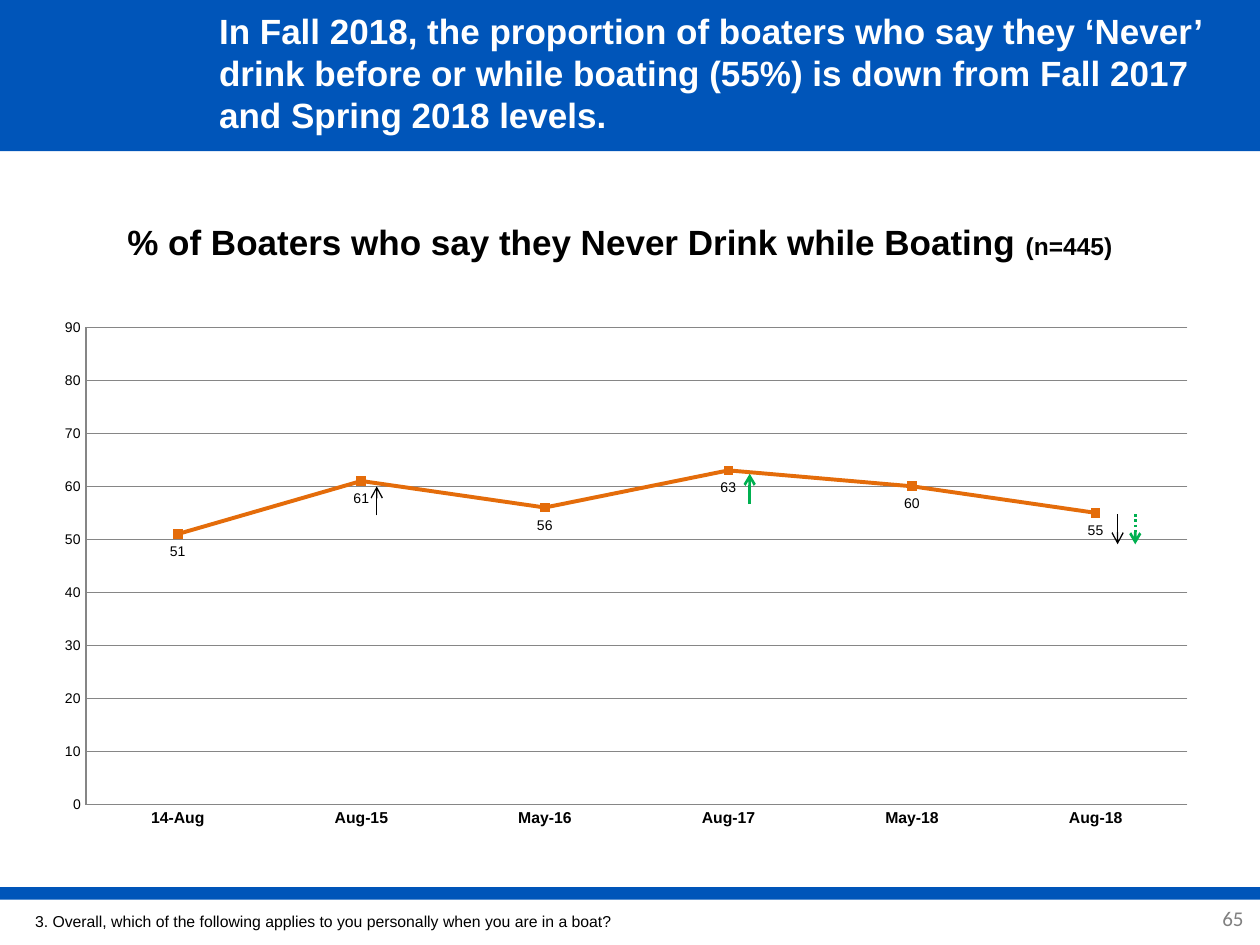
from lxml import etree
from pptx import Presentation
from pptx.chart.data import CategoryChartData
from pptx.dml.color import RGBColor
from pptx.enum.chart import XL_CHART_TYPE, XL_LABEL_POSITION, XL_MARKER_STYLE, XL_TICK_MARK
from pptx.enum.dml import MSO_LINE
from pptx.enum.shapes import MSO_CONNECTOR, MSO_SHAPE
from pptx.enum.text import MSO_ANCHOR, PP_ALIGN
from pptx.oxml import parse_xml
from pptx.oxml.ns import nsdecls, qn
from pptx.util import Inches, Pt

LINE = XL_CHART_TYPE.LINE_MARKERS
BELOW = XL_LABEL_POSITION.BELOW
SQUARE = XL_MARKER_STYLE.SQUARE
NO_TICK = XL_TICK_MARK.NONE
SOLID, DOTS = MSO_LINE.SOLID, MSO_LINE.ROUND_DOT
STRAIGHT, RECT = MSO_CONNECTOR.STRAIGHT, MSO_SHAPE.RECTANGLE
TOP, MID = MSO_ANCHOR.TOP, MSO_ANCHOR.MIDDLE
LEFT, MIDST, RIGHT = PP_ALIGN.LEFT, PP_ALIGN.CENTER, PP_ALIGN.RIGHT

HEX = {"blue": "0055B9", "white": "FFFFFF", "black": "000000", "gray": "808080",
       "grid": "868686", "orange": "E46C0A", "green": "00B050"}
RGB = {name: RGBColor.from_string(code) for name, code in HEX.items()}

deck = Presentation()
deck.slide_width, deck.slide_height = Inches(10), Inches(7.5)
slide = deck.slides.add_slide(deck.slide_layouts[6])
shapes = slide.shapes

# Grid of 100 columns by 75 rows
COL, ROW = deck.slide_width / 100, deck.slide_height / 75


def cells(x, y, w, h):
    return int(x * COL), int(y * ROW), int(w * COL), int(h * ROW)


def add_text(area, runs, size, color, bold=False, align=LEFT, anchor=MID, face="Arial"):
    frame = shapes.add_textbox(*cells(*area)).text_frame
    frame.word_wrap = True
    frame.vertical_anchor = anchor
    para = frame.paragraphs[0]
    para.alignment = align
    font = para.font
    font.name, font.size, font.bold = face, Pt(size), bold
    font.color.rgb = RGB[color]
    for text, small in runs:
        run = para.add_run()
        run.text = text
        if small:
            run.font.size = Pt(small)
    return frame


# Header band and footer rule
for area in ((0, -0.3, 100, 12.3), (0, 70.4, 100, 1)):
    band = shapes.add_shape(RECT, *cells(*area))
    band.shadow.inherit = False
    band.fill.solid()
    band.fill.fore_color.rgb = RGB["blue"]
    band.line.fill.background()

# Title and page number
add_text((16.4, 0, 80.9, 11.5),
         [("In Fall 2018, the proportion of boaters who say they ‘Never’ drink before "
           "or while boating (55%) is down from Fall 2017 and Spring 2018 levels.", None)],
         20, "white", bold=True)
page = add_text((93.6, 70.9, 6.3, 4), [("65", None)], 12, "gray",
                align=RIGHT, face="Calibri")
page.margin_left = page.margin_top = page.margin_bottom = Inches(0.04)
page.margin_right = Inches(0.12)

# Line chart
data = CategoryChartData()
data.categories = ["14-Aug", "Aug-15", "May-16", "Aug-17", "May-18", "Aug-18"]
data.add_series("Series 1", [51, 61, 56, 63, 60, 55])
chart = shapes.add_chart(LINE, *cells(3.3, 24.5, 92.8, 42.1), data).chart
chart.has_legend = chart.has_title = False
chart.font.name, chart.font.size = "Arial", Pt(8)
chart.font.color.rgb = RGB["black"]

months, scale = chart.category_axis, chart.value_axis
scale.minimum_scale, scale.maximum_scale, scale.major_unit = 0, 90, 10
scale.has_major_gridlines = True
for axis in (months, scale):
    axis.major_tick_mark = axis.minor_tick_mark = NO_TICK
for rule in (months.format.line, scale.format.line, scale.major_gridlines.format.line):
    rule.color.rgb = RGB["grid"]
    rule.width = Pt(0.75)
label = months.tick_labels.font
label.size, label.bold = Pt(9), True

plot = chart.plots[0]
plot.vary_by_categories = False
trend = plot.series[0]
trend.smooth = False
trend.format.line.color.rgb = RGB["orange"]
trend.format.line.width = Pt(2.25)
mark = trend.marker
mark.style, mark.size = SQUARE, 5
mark.format.fill.solid()
mark.format.fill.fore_color.rgb = RGB["orange"]
mark.format.line.color.rgb = RGB["orange"]
tags = trend.data_labels
tags.show_value, tags.position = True, BELOW

# Plot area as shares of the chart frame
zone = chart.plots[0]._element.getparent()
for old in zone.findall(qn("c:layout")):
    zone.remove(old)
share = "".join(f'<c:{key} val="{val}"/>' for key, val in (
    ("layoutTarget", "inner"), ("xMode", "edge"), ("yMode", "edge"),
    ("x", 0.038), ("y", 0.035), ("w", 0.942), ("h", 0.9)))
zone.insert(0, parse_xml(
    f'<c:layout {nsdecls("c")}><c:manualLayout>{share}</c:manualLayout></c:layout>'))

# Chart heading and survey question
add_text((7.2, 17, 84, 5.4),
         [("% of Boaters who say they Never Drink while Boating ", None), ("(n=445)", 14)],
         20, "black", bold=True, align=MIDST, anchor=TOP)
add_text((1.8, 71.2, 60.9, 3.8),
         [("3. Overall, which of the following applies to you personally "
           "when you are in a boat?", None)], 9, "black")

# Change arrows: column, start row, end row, colour, width, dash
for x, start, end, color, width, dash in (
        (59.5, 40, 37.6, "green", 1.5, SOLID),
        (29.9, 40.9, 38.6, "black", 0.75, SOLID),
        (88.7, 40.8, 43.2, "black", 0.75, SOLID),
        (90.1, 40.8, 43.2, "green", 1.5, DOTS)):
    arrow = shapes.add_connector(STRAIGHT, *cells(x, start, x, end))
    arrow.line.color.rgb = RGB[color]
    arrow.line.width = Pt(width)
    arrow.line.dash_style = dash
    etree.SubElement(arrow.line._get_or_add_ln(), qn("a:tailEnd"), type="arrow")
    etree.SubElement(arrow._element.spPr, qn("a:effectLst"))

deck.save("out.pptx")
